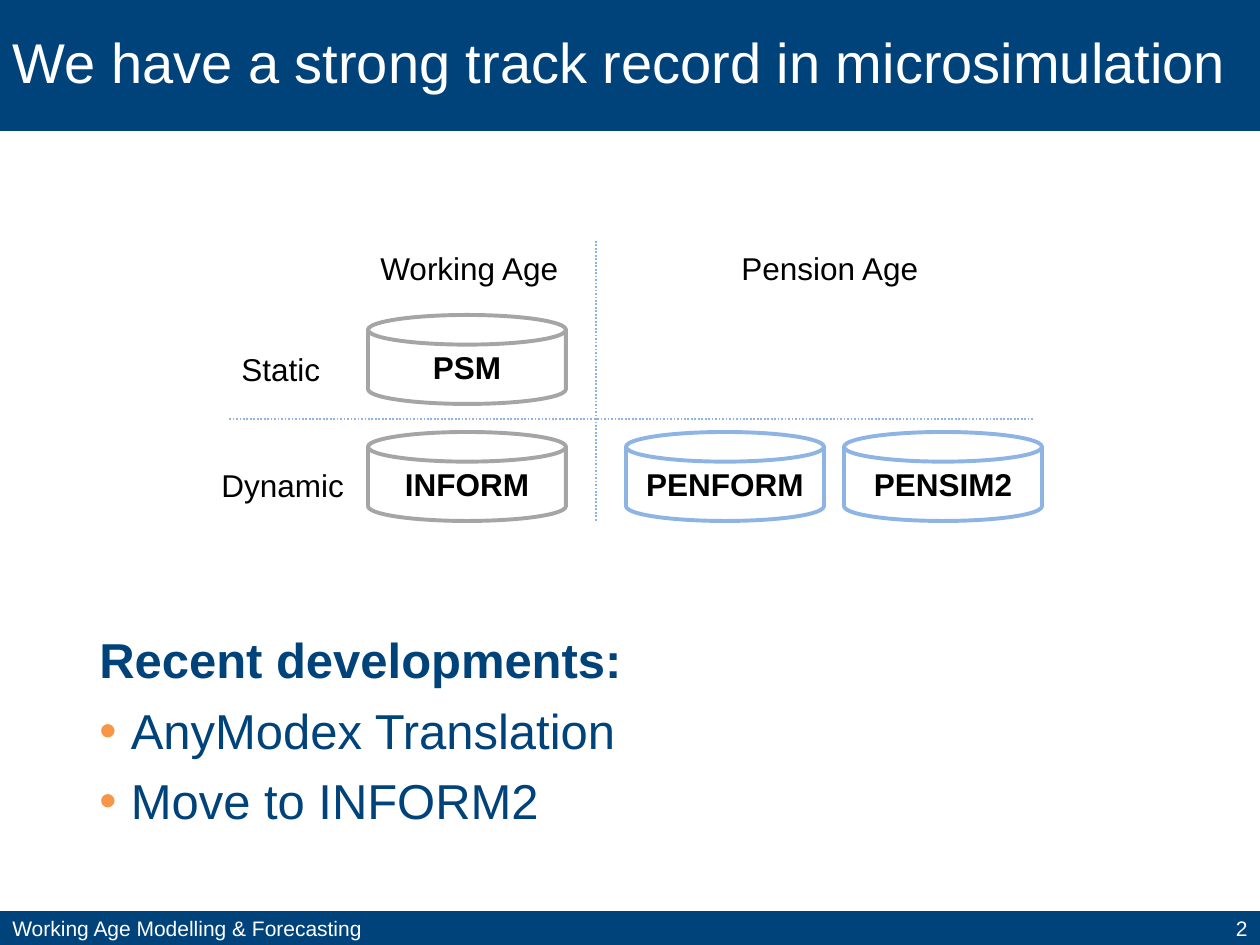
from dataclasses import dataclass

from lxml import etree
from pptx import Presentation
from pptx import util as u
from pptx.dml.color import RGBColor
from pptx.enum import dml, shapes, text
from pptx.oxml import ns

PX = 914400 / 126  # EMU in one px


@dataclass(frozen=True)
class Theme:
    font: str = "Arial"
    navy: RGBColor = RGBColor(0x00, 0x43, 0x7B)
    white: RGBColor = RGBColor(0xFF, 0xFF, 0xFF)
    black: RGBColor = RGBColor(0x00, 0x00, 0x00)
    grey: RGBColor = RGBColor(0xA5, 0xA5, 0xA5)
    blue: RGBColor = RGBColor(0x8E, 0xB4, 0xE3)
    bullet: str = "F79646"
    title: int = 32
    body: int = 28
    label: int = 18
    footer: int = 12


theme = Theme()


def emu(*lengths):
    return [u.Emu(round(length * PX)) for length in lengths]


def write(shape, wording, size, color, align=text.PP_ALIGN.LEFT, bold=False):
    frame = shape.text_frame
    frame.text = wording
    frame.word_wrap = True
    for para in frame.paragraphs:
        para.alignment = align
        for span in para.runs:
            span.font.name = theme.font
            span.font.size = u.Pt(size)
            span.font.bold = bold
            span.font.color.rgb = color
    return frame


deck = Presentation()
deck.slide_width, deck.slide_height = emu(1260, 945)
page = deck.slides.add_slide(deck.slide_layouts[5])

# Title band
title = page.shapes.title
title.left, title.top, title.width, title.height = emu(0, 0, 1260, 131)
title.fill.solid()
title.fill.fore_color.rgb = theme.navy
frame = write(title, "We have a strong track record in microsimulation", theme.title, theme.white)
frame.auto_size = text.MSO_AUTO_SIZE.NONE
frame.vertical_anchor = text.MSO_ANCHOR.MIDDLE
frame.paragraphs[0].line_spacing = 0.9

# Recent developments: a heading, then bullets
box = page.shapes.add_textbox(*emu(87, 630, 1086, 222))
frame = write(box, "Recent developments:\nAnyModex Translation\nMove to INFORM2",
              theme.body, theme.navy)
for para in frame.paragraphs:
    para.line_spacing = 0.9
    para.space_before = u.Pt(10)
heading, *bullets = frame.paragraphs
heading.runs[0].font.bold = True
for para in bullets:
    props = para._p.get_or_add_pPr()
    props.set("marL", str(u.Inches(0.25)))
    props.set("indent", str(-u.Inches(0.25)))
    color = etree.SubElement(props, ns.qn("a:buClr"))
    etree.SubElement(color, ns.qn("a:srgbClr"), val=theme.bullet)
    etree.SubElement(props, ns.qn("a:buFont"), typeface=theme.font)
    etree.SubElement(props, ns.qn("a:buChar"), char="•")

# Footer bands
for left, width, wording, align in (
    (0, 1043, "Working Age Modelling & Forecasting", text.PP_ALIGN.LEFT),
    (1043, 217, "2", text.PP_ALIGN.RIGHT),
):
    band = page.shapes.add_shape(shapes.MSO_SHAPE.RECTANGLE, *emu(left, 911, width, 34))
    band.shadow.inherit = False
    band.fill.solid()
    band.fill.fore_color.rgb = theme.navy
    band.line.fill.background()
    frame = write(band, wording, theme.footer, theme.white, align)
    frame.vertical_anchor = text.MSO_ANCHOR.MIDDLE

# Models, placed by age group and type
static_top, dynamic_top = 315, 432
for name, left, top, color in (
    ("INFORM", 368, dynamic_top, theme.grey),
    ("PENFORM", 626, dynamic_top, theme.blue),
    ("PENSIM2", 844, dynamic_top, theme.blue),
    ("PSM", 368, static_top, theme.grey),
):
    disk = page.shapes.add_shape(shapes.MSO_SHAPE.FLOWCHART_MAGNETIC_DISK,
                                 *emu(left, top, 198, 89))
    disk.shadow.inherit = False
    disk.fill.solid()
    disk.fill.fore_color.rgb = theme.white
    disk.line.color.rgb = color
    disk.line.width = u.Pt(2.25)
    frame = write(disk, name, theme.label, theme.black, text.PP_ALIGN.CENTER, bold=True)
    frame.vertical_anchor = text.MSO_ANCHOR.MIDDLE

# Column and row labels
for wording, left, top, width in (
    ("Working Age", 368, 243, 205),
    ("Pension Age", 729, 243, 204),
    ("Static", 229, 344, 105),
    ("Dynamic", 209, 460, 149),
):
    label = page.shapes.add_textbox(*emu(left, top, width, 50))
    frame = write(label, wording, theme.label, theme.black)
    frame.word_wrap = False
    frame.auto_size = text.MSO_AUTO_SIZE.SHAPE_TO_FIT_TEXT

# Dotted dividers
for ends in ((596, 241, 596, 521), (1033, 419, 229, 419)):
    divider = page.shapes.add_connector(shapes.MSO_CONNECTOR.STRAIGHT, *emu(*ends))
    divider.line.color.rgb = theme.blue
    divider.line.width = u.Pt(1)
    divider.line.dash_style = dml.MSO_LINE.ROUND_DOT
    etree.SubElement(divider._element.spPr, ns.qn("a:effectLst"))

deck.save("out.pptx")
